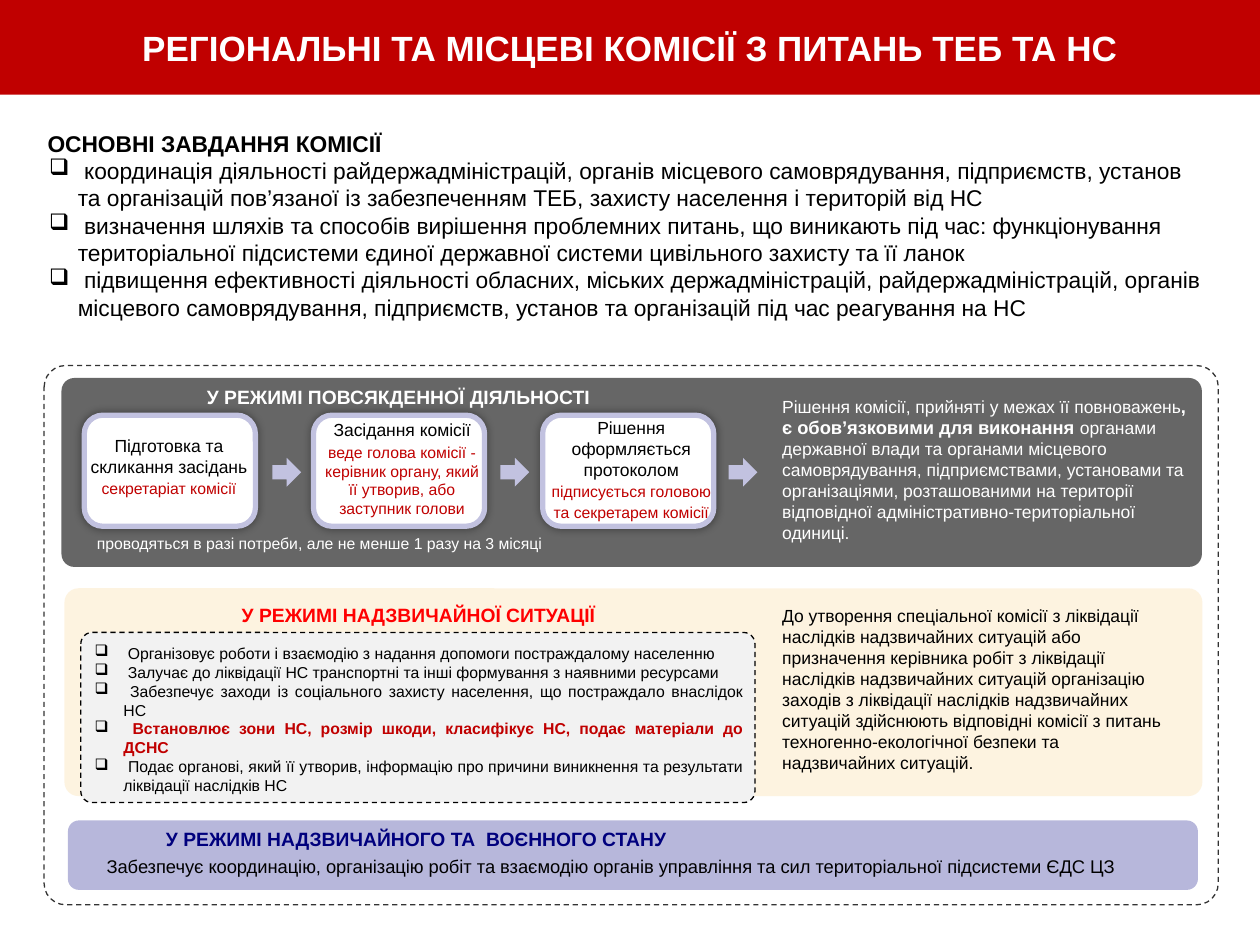
from lxml.etree import SubElement
from pptx import Presentation
from pptx.dml.color import RGBColor
from pptx.enum.dml import MSO_LINE
from pptx.enum.shapes import MSO_SHAPE
from pptx.enum.text import MSO_ANCHOR, MSO_AUTO_SIZE, PP_ALIGN
from pptx.oxml.ns import qn
from pptx.util import Cm, Pt

FONT = "Arial"
BLACK, WHITE, RED, LILAC = "000000", "FFFFFF", "C00000", "C2C2E0"
LEFT, CENTER, JUSTIFY = PP_ALIGN.LEFT, PP_ALIGN.CENTER, PP_ALIGN.JUSTIFY
STEP_LEFT, STEP_PITCH = 1.7, 4.62
ARROW_LEFT, ARROW_PITCH = 5.49, 4.6
SIDE_LEFT = 15.52

COMMISSION_TASKS = [
    " координація діяльності райдержадміністрацій, органів місцевого самоврядування, підприємств, установ та організацій пов’язаної із забезпеченням ТЕБ, захисту населення і територій від НС",
    " визначення шляхів та способів вирішення проблемних питань, що виникають під час: функціонування територіальної підсистеми єдиної державної системи цивільного захисту та її ланок",
    " підвищення ефективності діяльності обласних, міських держадміністрацій, райдержадміністрацій, органів місцевого самоврядування, підприємств, установ та організацій під час реагування на НС",
]
EMERGENCY_TASKS = [
    (" Організовує роботи і взаємодію з надання допомоги постраждалому населенню ", BLACK, False),
    (" Залучає до ліквідації НС транспортні та інші формування з наявними ресурсами", BLACK, False),
    (" Забезпечує заходи із соціального захисту населення, що постраждало внаслідок НС", BLACK, False),
    (" Встановлює зони НС, розмір шкоди, класифікує НС, подає матеріали до ДСНС", RED, True),
    (" Подає органові, який її утворив, інформацію про причини виникнення та результати ліквідації наслідків НС", BLACK, False),
]
STEPS = [
    (1.5, 8.64, [[("Підготовка та скликання засідань ", 10, BLACK),
                  ("секретаріат комісії", 9, RED)]]),
    (6.2, 8.33, [[("Засідання комісії ", 10, BLACK), ("веде голова комісії -", 9, RED)],
                 [("керівник органу, який її утворив, або заступник голови", 9, RED)]]),
    (10.82, 8.28, [[("Рішення оформляється протоколом ", 10, BLACK),
                    ("підписується головою та секретарем комісії", 9, RED)]]),
]
DECISION = [
    ("Рішення комісії, прийняті у межах її повноважень", 10, WHITE),
    (", є обов’язковими для виконання ", 10.5, WHITE, True),
    ("органами державної влади та органами місцевого самоврядування, підприємствами, установами та організаціями, розташованими на території відповідної адміністративно-територіальної одиниці.", 10, WHITE),
]
SPECIAL_COMMISSION = "До утворення спеціальної комісії з ліквідації наслідків надзвичайних ситуацій або призначення керівника робіт з ліквідації наслідків надзвичайних ситуацій організацію заходів з ліквідації наслідків надзвичайних ситуацій здійснюють відповідні комісії з питань техногенно-екологічної безпеки та надзвичайних ситуацій."
COORDINATION = "Забезпечує координацію, організацію робіт та взаємодію органів управління та сил територіальної підсистеми ЄДС ЦЗ"


def color(value):
    """Turn a hex string into a colour."""
    return RGBColor.from_string(value)


def format_run(run, size, ink, bold=False):
    """Apply the slide font to a run."""
    run.font.name = FONT
    run.font.size = Pt(size)
    run.font.bold = bold
    run.font.color.rgb = color(ink)


def add_bullet(paragraph):
    """Give a paragraph a hanging box bullet."""
    properties = paragraph._p.get_or_add_pPr()
    properties.set("marL", str(Cm(0.61)))
    properties.set("indent", str(Cm(-0.58)))
    bullet_color = SubElement(properties, qn("a:buClr"))
    SubElement(bullet_color, qn("a:srgbClr"), val=BLACK)
    SubElement(properties, qn("a:buChar"), char="❑")


def add_text(slide, left, top, width, height, paragraphs, align=LEFT, bulleted=()):
    """Add a text box from paragraphs of (text, size, colour, bold) runs."""
    shape = slide.shapes.add_textbox(Cm(left), Cm(top), Cm(width), Cm(height))
    frame = shape.text_frame
    frame.word_wrap = True
    for index, runs in enumerate(paragraphs):
        paragraph = frame.add_paragraph() if index else frame.paragraphs[0]
        paragraph.alignment = align
        paragraph.line_spacing = Pt(1.2 * runs[0][1])
        for text, *style in runs:
            run = paragraph.add_run()
            run.text = text
            format_run(run, *style)
        if index in bulleted:
            add_bullet(paragraph)


def add_box(slide, kind, left, top, width, height, fill, corner=None, alpha=None,
            line=None, weight=0.75, dash=None):
    """Add a filled preset shape, with an outline if a line colour is given."""
    shape = slide.shapes.add_shape(kind, Cm(left), Cm(top), Cm(width), Cm(height))
    shape.shadow.inherit = False
    if corner is not None:
        shape.adjustments[0] = corner
    shape.fill.solid()
    shape.fill.fore_color.rgb = color(fill)
    if alpha is not None:
        tone = shape._element.spPr.find(".//" + qn("a:srgbClr"))
        SubElement(tone, qn("a:alpha"), val=str(alpha * 1000))
    if line:
        shape.line.color.rgb = color(line)
        shape.line.width = Pt(weight)
        shape.line.dash_style = dash
    else:
        shape.line.fill.background()
    return shape


def add_panel(slide, left, top, width, height, fill, corner, **style):
    """Add a rounded panel."""
    return add_box(slide, MSO_SHAPE.ROUNDED_RECTANGLE, left, top, width, height,
                   fill, corner, **style)


def add_glow(shape):
    """Put a soft shadow all round a shape."""
    effects = shape._element.spPr.find(qn("a:effectLst"))
    shadow = SubElement(effects, qn("a:outerShdw"), blurRad=str(Pt(5)), dist="0", dir="0")
    tone = SubElement(shadow, qn("a:srgbClr"), val=BLACK)
    SubElement(tone, qn("a:alpha"), val="40000")


def set_title(slide, text):
    """Format the title placeholder as a red band."""
    title = slide.shapes.title
    title.left, title.top, title.width, title.height = Cm(0), Cm(0), Cm(25.4), Cm(1.91)
    title.fill.solid()
    title.fill.fore_color.rgb = color(RED)
    frame = title.text_frame
    frame.text = text
    frame.auto_size = MSO_AUTO_SIZE.NONE
    frame.vertical_anchor = MSO_ANCHOR.MIDDLE
    frame.paragraphs[0].alignment = CENTER
    format_run(frame.paragraphs[0].runs[0], 20, WHITE, True)


def add_heading(slide, left, top, width, text, ink):
    """Add the centred heading of a mode."""
    add_text(slide, left, top, width, 0.71, [[(text, 11, ink, True)]], CENTER)


def add_steps(slide):
    """Add the three steps of daily work, each followed by an arrow."""
    for index, (left, top, paragraphs) in enumerate(STEPS):
        step = add_panel(slide, STEP_LEFT + index * STEP_PITCH, 8.37, 3.45, 2.24, WHITE,
                         0.167, line=LILAC, weight=3)
        add_glow(step)
        add_box(slide, MSO_SHAPE.RIGHT_ARROW, ARROW_LEFT + index * ARROW_PITCH, 9.23,
                0.58, 0.58, LILAC)
        add_text(slide, left, top, 3.81, 2.2, paragraphs, CENTER)


def add_daily_mode(slide):
    """Add the block on daily work."""
    add_panel(slide, 1.24, 7.62, 22.99, 3.81, "262626", 0.068, alpha=70)
    add_heading(slide, 1.5, 7.65, 13.18, "У РЕЖИМІ ПОВСЯКДЕННОЇ ДІЯЛЬНОСТІ ", WHITE)
    add_steps(slide)
    note = "проводяться в разі потреби, але не менше 1 разу на 3 місяці "
    add_text(slide, 1.68, 10.64, 9.6, 0.64, [[(note, 9, WHITE)]], CENTER)
    add_text(slide, SIDE_LEFT, 7.87, 8.79, 3.25, [DECISION])


def add_emergency_mode(slide):
    """Add the texts on an emergency."""
    add_panel(slide, 1.63, 12.75, 13.59, 3.43, "F2F2F2", 0.067, line=BLACK, dash=MSO_LINE.DASH)
    tasks = [[(text, 9, ink, bold)] for text, ink, bold in EMERGENCY_TASKS]
    add_text(slide, 1.63, 12.85, 13.59, 3.33, tasks, JUSTIFY, range(len(tasks)))
    add_heading(slide, 1.7, 12.04, 13.59, "У РЕЖИМІ НАДЗВИЧАЙНОЇ СИТУАЦІЇ ", "FF0000")
    add_text(slide, SIDE_LEFT, 12.07, 8.2, 3.63, [[(SPECIAL_COMMISSION, 10, BLACK)]])


def add_martial_mode(slide):
    """Add the block on the state of emergency and martial law."""
    add_panel(slide, 1.37, 16.54, 22.78, 1.4, "9999CC", 0.159, alpha=70)
    add_heading(slide, 1.7, 16.56, 13.39, "У РЕЖИМІ НАДЗВИЧАЙНОГО ТА  ВОЄННОГО СТАНУ", "00007D")
    add_text(slide, 1.9, 17.12, 22.2, 0.69, [[(COORDINATION, 10.5, BLACK)]], JUSTIFY)


def main():
    """Build and save the slide."""
    presentation = Presentation()
    presentation.slide_width, presentation.slide_height = Cm(25.4), Cm(19.05)
    slide = presentation.slides.add_slide(presentation.slide_layouts[5])
    set_title(slide, "РЕГІОНАЛЬНІ ТА МІСЦЕВІ КОМІСІЇ З ПИТАНЬ ТЕБ ТА НС")
    add_panel(slide, 1.3, 11.86, 22.94, 4.19, "F9C86F", 0.068, alpha=70)
    add_panel(slide, 0.89, 7.37, 23.67, 10.87, WHITE, 0.04, alpha=70,
              line="333333", dash=MSO_LINE.DASH)
    tasks = [[("ОСНОВНІ ЗАВДАННЯ КОМІСІЇ", 13, BLACK, True)]]
    tasks += [[(text, 13, BLACK)] for text in COMMISSION_TASKS]
    add_text(slide, 0.71, 2.49, 23.8, 4.09, tasks, bulleted=range(1, len(tasks)))
    add_daily_mode(slide)
    add_emergency_mode(slide)
    add_martial_mode(slide)
    presentation.save("out.pptx")


if __name__ == "__main__":
    main()
